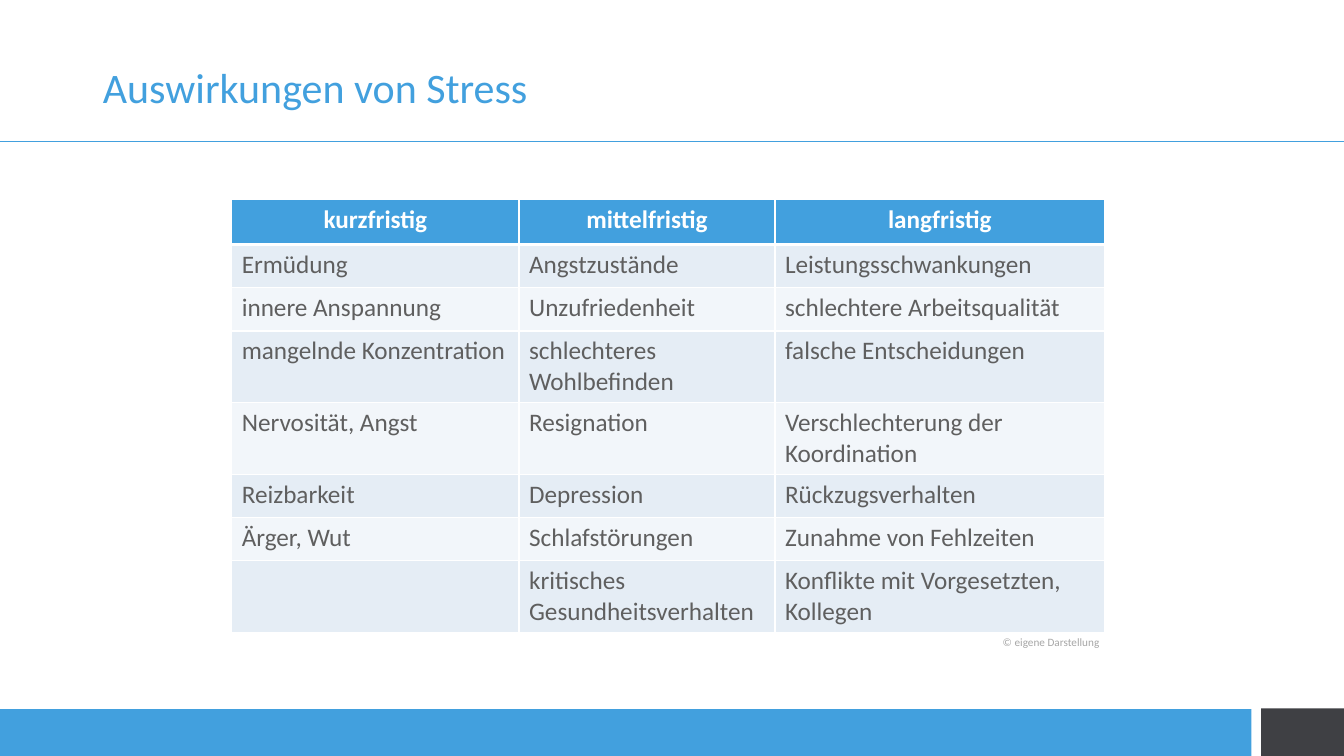
from lxml.etree import SubElement
from pptx import Presentation
from pptx.dml.color import RGBColor
from pptx.enum.shapes import MSO_CONNECTOR, MSO_SHAPE
from pptx.enum.text import MSO_ANCHOR, MSO_AUTO_SIZE, PP_ALIGN
from pptx.oxml.ns import qn
from pptx.util import Cm, Pt

COLORS = {
    "blue": "42A0DE",
    "dark": "3F4044",
    "white": "FFFFFF",
    "text": "5F5F5F",
    "note": "A6A6A6",
    "odd": "E5EDF5",
    "even": "F2F6FA",
}
WIDTH, HEIGHT = 33.87, 19.05
EFFECTS = [
    ("kurzfristig", "mittelfristig", "langfristig"),
    ("Ermüdung", "Angstzustände", "Leistungsschwankungen"),
    ("innere Anspannung", "Unzufriedenheit", "schlechtere Arbeitsqualität"),
    ("mangelnde Konzentration", "schlechteres Wohlbefinden", "falsche Entscheidungen"),
    ("Nervosität, Angst", "Resignation", "Verschlechterung der Koordination"),
    ("Reizbarkeit", "Depression", "Rückzugsverhalten"),
    ("Ärger, Wut", "Schlafstörungen", "Zunahme von Fehlzeiten"),
    ("", "kritisches Gesundheitsverhalten", "Konflikte mit Vorgesetzten, Kollegen"),
]
COLS = [7.24, 6.45, 8.31]
ROWS = [1.14, 1.09, 1.09, 1.8, 1.8, 1.09, 1.09, 1.8]


class Deck:
    face = "Calibri"

    def __init__(self):
        self.file = Presentation()
        self.file.slide_width, self.file.slide_height = Cm(WIDTH), Cm(HEIGHT)
        self.slide = self.file.slides.add_slide(self.file.slide_layouts[5])
        self.shapes = self.slide.shapes

    def color(self, name):
        return RGBColor.from_string(COLORS[name])

    def style(self, para, size, color, bold=False, align=PP_ALIGN.LEFT):
        para.alignment = align
        font = para.font
        font.name, font.size, font.bold = self.face, Pt(size), bold
        font.color.rgb = self.color(color)

    def bar(self, left, top, width, color):
        box = self.shapes.add_shape(
            MSO_SHAPE.RECTANGLE, Cm(left), Cm(top), Cm(width), Cm(HEIGHT - top))
        box.shadow.inherit = False
        box.fill.solid()
        box.fill.fore_color.rgb = self.color(color)
        box.line.fill.background()

    def rule(self, top, color):
        line = self.shapes.add_connector(
            MSO_CONNECTOR.STRAIGHT, 0, Cm(top), Cm(WIDTH), Cm(top))
        line.line.width = Pt(0.5)
        line.line.color.rgb = self.color(color)
        SubElement(line._element.spPr, qn("a:effectLst"))

    def title(self, text, left, top, width, height):
        box = self.shapes.title
        box.left, box.top, box.width, box.height = map(Cm, (left, top, width, height))
        frame = box.text_frame
        frame.text = text
        frame.vertical_anchor = MSO_ANCHOR.MIDDLE
        para = frame.paragraphs[0]
        para.line_spacing = 0.9
        self.style(para, 30, "blue")

    def edges(self, cell, top, base):
        props = cell._tc.get_or_add_tcPr()
        for side, width in zip("LRTB", (1, 1, top, base)):
            edge = SubElement(props, qn("a:ln" + side), w=str(Pt(width)))
            fill = SubElement(edge, qn("a:solidFill"))
            SubElement(fill, qn("a:srgbClr"), val=COLORS["white"])

    def table(self, data, left, top, cols, rows):
        grid = self.shapes.add_table(
            len(rows), len(cols), Cm(left), Cm(top), Cm(sum(cols)), Cm(sum(rows))).table
        for col, width in zip(grid.columns, cols):
            col.width = Cm(width)
        for i, (row, height) in enumerate(zip(grid.rows, rows)):
            row.height = Cm(height)
            head = i == 0
            shade = "blue" if head else "odd" if i % 2 else "even"
            for cell, text in zip(row.cells, data[i]):
                cell.text = text
                self.edges(cell, 3 if i == 1 else 1, 3 if head else 1)
                cell.fill.solid()
                cell.fill.fore_color.rgb = self.color(shade)
                self.style(cell.text_frame.paragraphs[0], 18,
                           "white" if head else "text", head,
                           PP_ALIGN.CENTER if head else PP_ALIGN.LEFT)

    def note(self, text, left, top, width, height):
        box = self.shapes.add_textbox(Cm(left), Cm(top), Cm(width), Cm(height))
        frame = box.text_frame
        frame.text = text
        frame.word_wrap = False
        frame.auto_size = MSO_AUTO_SIZE.SHAPE_TO_FIT_TEXT
        self.style(frame.paragraphs[0], 8, "note")


def main():
    deck = Deck()
    deck.bar(31.78, 17.85, 2.09, "dark")
    deck.bar(0, 17.87, 31.54, "blue")
    deck.rule(3.56, "blue")
    deck.title("Auswirkungen von Stress", 2.34, 1.02, 29.21, 2.49)
    deck.table(EFFECTS, 5.84, 5.02, COLS, ROWS)
    deck.note("© eigene Darstellung", 25.02, 15.88, 2.97, 0.6)
    deck.file.save("out.pptx")


if __name__ == "__main__":
    main()
